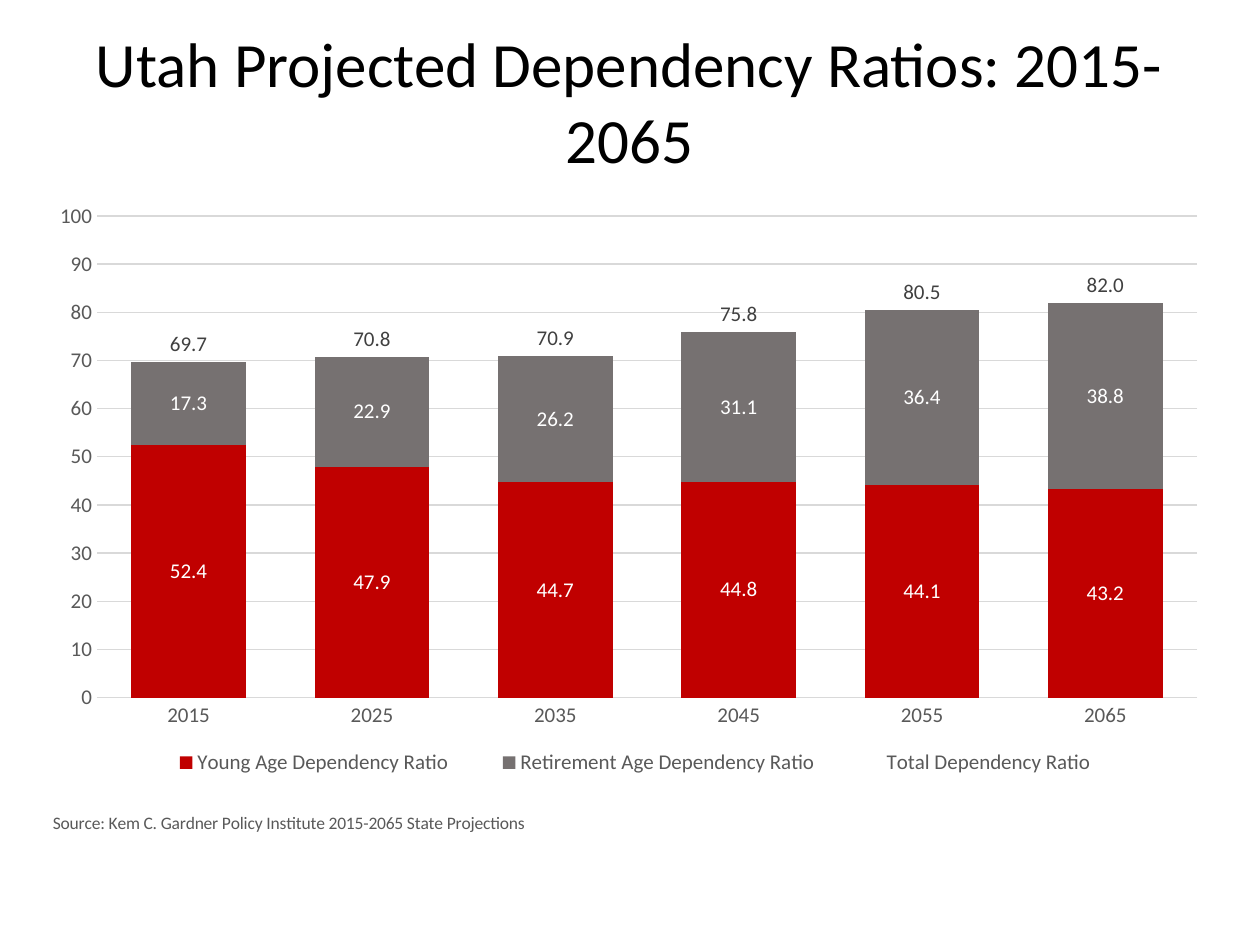
from pptx import Presentation
from pptx.chart.data import CategoryChartData
from pptx.dml.color import RGBColor
from pptx.enum.chart import XL_CHART_TYPE, XL_LABEL_POSITION, XL_LEGEND_POSITION, XL_TICK_MARK
from pptx.enum.text import MSO_ANCHOR, MSO_AUTO_SIZE, PP_ALIGN
from pptx.oxml import parse_xml
from pptx.oxml.ns import nsdecls
from pptx.util import Pt

STACKED = XL_CHART_TYPE.COLUMN_STACKED
CENTER_LABEL = XL_LABEL_POSITION.CENTER
BASE_LABEL = XL_LABEL_POSITION.INSIDE_BASE
BOTTOM = XL_LEGEND_POSITION.BOTTOM
NO_TICK = XL_TICK_MARK.NONE
MIDDLE = MSO_ANCHOR.MIDDLE
FIT_SHAPE = MSO_AUTO_SIZE.SHAPE_TO_FIT_TEXT
CENTER = PP_ALIGN.CENTER

COLORS = {
    "title": "000000",
    "muted": "595959",
    "grid": "D9D9D9",
    "young": "C00000",
    "retired": "767171",
    "inside": "FFFFFF",
    "total": "404040",
}
YEARS = ["2015", "2025", "2035", "2045", "2055", "2065"]
SERIES = [
    ("Young Age Dependency Ratio", (52.4, 47.9, 44.7, 44.8, 44.1, 43.2), "young", "inside", CENTER_LABEL),
    ("Retirement Age Dependency Ratio", (17.3, 22.9, 26.2, 31.1, 36.4, 38.8), "retired", "inside", CENTER_LABEL),
    ("Total Dependency Ratio", (69.7, 70.8, 70.9, 75.8, 80.5, 82.0), None, "total", BASE_LABEL),
]
LEFT, WIDTH = 21.6, 676


class SlideBuilder:
    """Holds the deck style and the current slide."""

    def __init__(self, presentation, font_name="Calibri"):
        self.font_name = font_name
        self.slide = presentation.slides.add_slide(presentation.slide_layouts[5])

    def style_font(self, font, size, color):
        font.name = self.font_name
        font.size = Pt(size)
        font.bold = False
        font.color.rgb = RGBColor.from_string(COLORS[color])

    def style_line(self, line):
        line.width = Pt(0.75)
        line.color.rgb = RGBColor.from_string(COLORS["grid"])

    def place(self, parent, before, x, y, width=None, height=None, inner=False):
        for layout in parent.xpath("c:layout"):
            parent.remove(layout)
        parts = '<c:layoutTarget val="inner"/>' if inner else ""
        parts += '<c:xMode val="edge"/><c:yMode val="edge"/>'
        for tag, value in (("x", x), ("y", y), ("w", width), ("h", height)):
            if value is not None:
                parts += f'<c:{tag} val="{value}"/>'
        layout = parse_xml(
            f'<c:layout {nsdecls("c")}><c:manualLayout>{parts}</c:manualLayout></c:layout>'
        )
        parent.xpath(before)[0].addprevious(layout)

    def title(self, text, left, top, width, height):
        shape = self.slide.shapes.title
        shape.left, shape.top, shape.width, shape.height = map(Pt, (left, top, width, height))
        text_frame = shape.text_frame
        text_frame.text = text
        text_frame.word_wrap = True
        text_frame.auto_size = FIT_SHAPE
        text_frame.vertical_anchor = MIDDLE
        paragraph = text_frame.paragraphs[0]
        paragraph.alignment = CENTER
        self.style_font(paragraph.runs[0].font, 36, "title")

    def stacked_chart(self, source, left, top, width, height):
        data = CategoryChartData()
        data.categories = YEARS
        for name, values, *_ in SERIES:
            data.add_series(name, values)
        chart = self.slide.shapes.add_chart(
            STACKED, *map(Pt, (left, top, width, height)), data
        ).chart
        chart.has_title = False
        self.style_font(chart.font, 12, "title")
        plot = chart.plots[0]
        plot.gap_width, plot.overlap = 60, 100
        plot.vary_by_categories = False
        for series, (_, _, fill, label, position) in zip(plot.series, SERIES):
            self.format_series(series, fill, label, position)
        self.format_axes(chart, source)
        chart.has_legend = True
        chart.legend.position = BOTTOM
        chart.legend.include_in_layout = False
        self.style_font(chart.legend.font, 12, "muted")
        root = chart.element
        self.place(root.xpath("c:chart/c:plotArea")[0], "c:barChart", 0.05, 0.04, 0.93, 0.74, True)
        self.place(root.xpath("c:chart/c:legend")[0], "c:overlay", 0.08, 0.85, 0.85, 0.06)
        self.place(root.xpath(".//c:catAx/c:title")[0], "c:overlay", 0.01, 0.95)

    def format_series(self, series, fill, label, position):
        if fill:
            series.format.fill.solid()
            series.format.fill.fore_color.rgb = RGBColor.from_string(COLORS[fill])
        else:
            series.format.fill.background()
        series.format.line.fill.background()
        labels = series.data_labels
        labels.show_value = True
        labels.number_format = "#,##0.0"
        labels.number_format_is_linked = False
        labels.position = position
        self.style_font(labels.font, 12, label)

    def format_axes(self, chart, source):
        category_axis, value_axis = chart.category_axis, chart.value_axis
        for axis in (category_axis, value_axis):
            axis.major_tick_mark = axis.minor_tick_mark = NO_TICK
            self.style_font(axis.tick_labels.font, 12, "muted")
        self.style_line(category_axis.format.line)
        text_frame = category_axis.axis_title.text_frame
        text_frame.text = source
        self.style_font(text_frame.paragraphs[0].runs[0].font, 10, "muted")
        value_axis.minimum_scale, value_axis.maximum_scale = 0, 100
        value_axis.major_unit = 10
        value_axis.tick_labels.number_format = "0"
        value_axis.tick_labels.number_format_is_linked = False
        value_axis.format.line.fill.background()
        self.style_line(value_axis.major_gridlines.format.line)


def main():
    presentation = Presentation()
    presentation.slide_width, presentation.slide_height = Pt(720), Pt(540)
    builder = SlideBuilder(presentation)
    builder.title("Utah Projected Dependency Ratios: 2015-2065", LEFT, 10, WIDTH, 94.5)
    builder.stacked_chart(
        "Source: Kem C. Gardner Policy Institute 2015-2065 State Projections",
        LEFT, 108.5, WIDTH, 372,
    )
    presentation.save("out.pptx")


if __name__ == "__main__":
    main()
